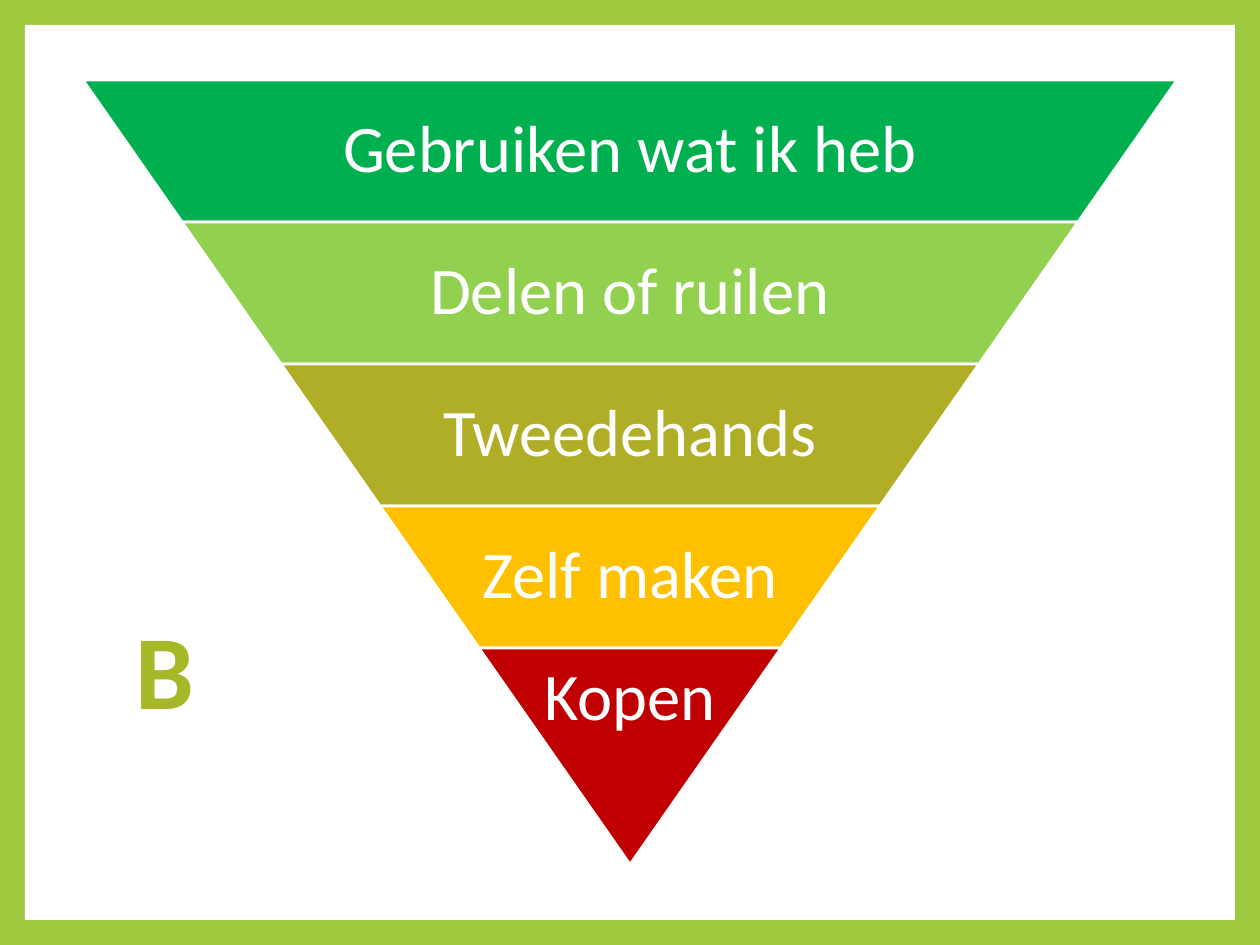
from pptx import Presentation
from pptx.dml.color import RGBColor
from pptx.enum.shapes import MSO_SHAPE
from pptx.enum.text import MSO_ANCHOR, PP_ALIGN
from pptx.util import Pt

RECT, TRAP = MSO_SHAPE.RECTANGLE, MSO_SHAPE.TRAPEZOID
TOP, MIDDLE = MSO_ANCHOR.TOP, MSO_ANCHOR.MIDDLE
LEFT, CENTER = PP_ALIGN.LEFT, PP_ALIGN.CENTER

WHITE = RGBColor(0xFF, 0xFF, 0xFF)
LIME = RGBColor(0x9E, 0xC8, 0x3E)
MOSS = RGBColor(0xA6, 0xB7, 0x27)
GREEN = RGBColor(0x00, 0xB0, 0x50)
LIGHT = RGBColor(0x92, 0xD0, 0x50)
OLIVE = RGBColor(0xB0, 0xAD, 0x26)
AMBER = RGBColor(0xFF, 0xC0, 0x00)
RED = RGBColor(0xC0, 0x00, 0x00)

SCALE = 914400 / 126  # EMU per px


def px(*nums):
    return [round(n * SCALE) for n in nums]


def add_text(box, text, size, color, align, anchor, pads):
    frame = box.text_frame
    frame.word_wrap = True
    frame.vertical_anchor = anchor
    (frame.margin_left, frame.margin_top,
     frame.margin_right, frame.margin_bottom) = px(*pads)
    para = frame.paragraphs[0]
    para.alignment = align
    run = para.add_run()
    run.text = text
    run.font.name = "Calibri"
    run.font.size = Pt(size)
    run.font.color.rgb = color
    return para


prs = Presentation()
prs.slide_width, prs.slide_height = px(1260, 945)
slide = prs.slides.add_slide(prs.slide_layouts[6])
shapes = slide.shapes

# Lime border around a white panel
slide.background.fill.solid()
slide.background.fill.fore_color.rgb = LIME
panel = shapes.add_shape(RECT, *px(25, 25, 1210, 895))
panel.shadow.inherit = False
panel.fill.solid()
panel.fill.fore_color.rgb = WHITE
panel.line.fill.background()

# Upside-down pyramid: each band starts where the one above ends
bands = [
    ("Gebruiken wat ik heb", GREEN),
    ("Delen of ruilen", LIGHT),
    ("Tweedehands", OLIVE),
    ("Zelf maken", AMBER),
    ("Kopen", RED),
]
MID, START, STEP, TIP = 630, 80, 142, 216
WIDE, INSET = 1094, 99
SLOPE = 0.698  # side inset per unit of height

for i, (label, color) in enumerate(bands):
    last = i == len(bands) - 1
    top = START + i * STEP
    width = WIDE - 2 * INSET * i
    height = TIP if last else STEP

    band = shapes.add_shape(TRAP, *px(MID - width / 2, top, width, height))
    band.rotation = 180
    band.adjustments[0] = SLOPE
    band.shadow.inherit = False
    band.fill.solid()
    band.fill.fore_color.rgb = color
    band.line.color.rgb = WHITE
    band.line.width = Pt(1.5)

    room = width if last else width * 0.65
    box = shapes.add_textbox(*px(MID - room / 2, top, room, height))
    para = add_text(box, label, 38, WHITE, CENTER,
                    TOP if last else MIDDLE, (6, 6, 6, 6))
    para.line_spacing = 1.0 if last else 0.9

# Letter of the slide
box = shapes.add_textbox(*px(100, 599, 154, 140))
para = add_text(box, "B", 60, MOSS, LEFT, TOP, (36, 6, 13, 6))
para.runs[0].font.bold = True

prs.save("out.pptx")
